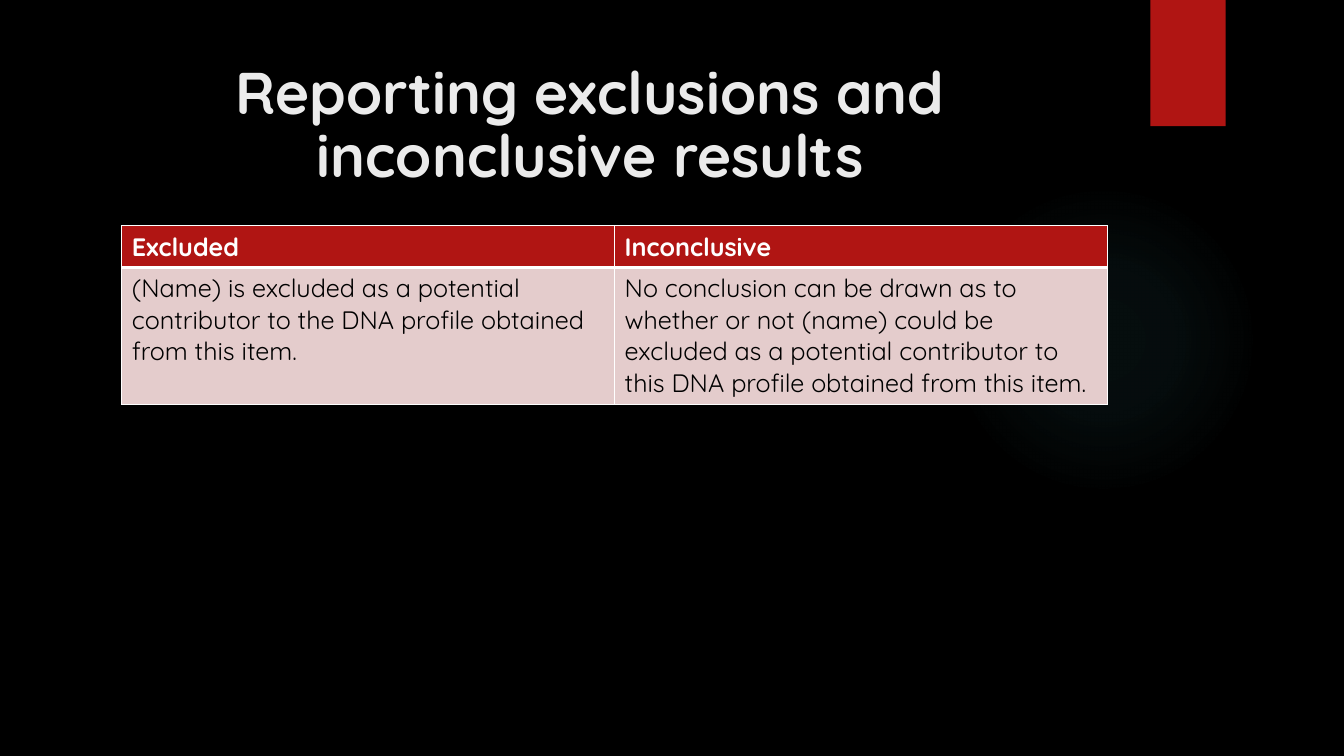
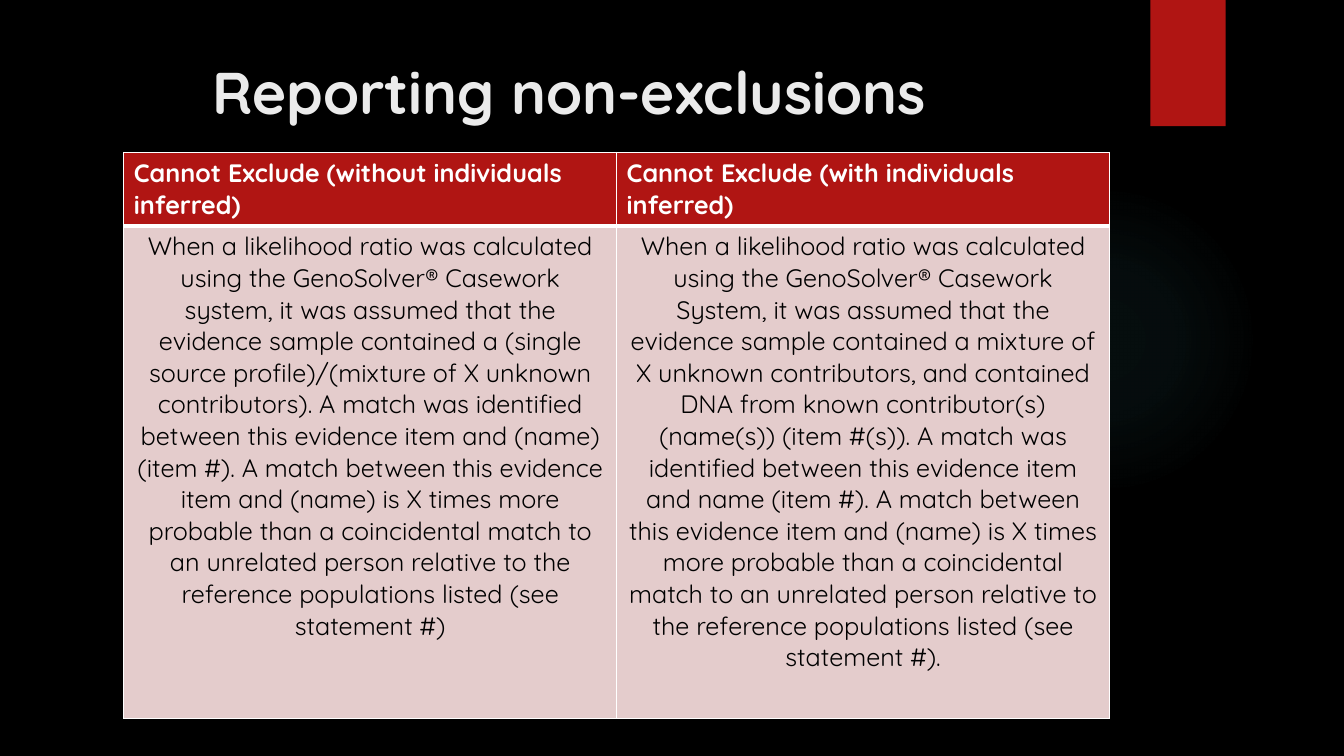
from lxml.etree import SubElement
from pptx import Presentation
from pptx.dml.color import RGBColor
from pptx.enum.shapes import MSO_SHAPE
from pptx.enum.text import MSO_ANCHOR, MSO_AUTO_SIZE, PP_ALIGN
from pptx.oxml.ns import qn
from pptx.util import Cm, Pt

FONT = "Quicksand"
COLORS = {
    "background": "000000",
    "glow": "50B9C1",
    "accent": "B01513",
    "title": "EBEBEB",
    "header_text": "FFFFFF",
    "body_fill": "E4CCCC",
    "body_text": "000000",
    "border": "FFFFFF",
}
GLOW_STOPS = [(0, 7), (36, 6), (69, 0)]
COLUMN_WIDTH = 12.42

SLIDES = [
    {
        "title": "Reporting exclusions and inconclusive results",
        "title_size": (26.14, 3.89),
        "table_at": (3.07, 5.69),
        "row_heights": (1.04, 3.45),
        "body_align": PP_ALIGN.LEFT,
        "rows": [
            ("Excluded", "Inconclusive"),
            (
                "(Name) is excluded as a potential contributor to the DNA profile "
                "obtained from this item.",
                "No conclusion can be drawn as to whether or not (name) could be "
                "excluded as a potential contributor to this DNA profile obtained "
                "from this item.",
            ),
        ],
    },
    {
        "title": "Reporting non-exclusions",
        "title_size": (25.08, 2.95),
        "table_at": (3.12, 3.84),
        "row_heights": (1.83, 12.42),
        "body_align": PP_ALIGN.CENTER,
        "rows": [
            (
                "Cannot Exclude (without individuals inferred)",
                "Cannot Exclude (with individuals inferred)",
            ),
            (
                "When a likelihood ratio was calculated using the GenoSolver® "
                "Casework system, it was assumed that the evidence sample contained "
                "a (single source profile)/(mixture of X unknown contributors). "
                "A match was identified between this evidence item and (name) "
                "(item #). A match between this evidence item and (name) is X times "
                "more probable than a coincidental match to an unrelated person "
                "relative to the reference populations listed (see statement #)",
                "When a likelihood ratio was calculated using the GenoSolver® "
                "Casework System, it was assumed that the evidence sample contained "
                "a mixture of X unknown contributors, and contained DNA from known "
                "contributor(s) (name(s)) (item #(s)). A match was identified "
                "between this evidence item and name (item #). A match between this "
                "evidence item and (name) is X times more probable than a "
                "coincidental match to an unrelated person relative to the reference "
                "populations listed (see statement #).",
            ),
        ],
    },
]


def rgb(name):
    return RGBColor.from_string(COLORS[name])


def style(para, size, color, bold, align):
    para.alignment = align
    para.font.name = FONT
    para.font.size = Pt(size)
    para.font.bold = bold
    para.font.color.rgb = rgb(color)


def add_plain_shape(page, kind, left, top, width, height):
    shape = page.shapes.add_shape(kind, Cm(left), Cm(top), Cm(width), Cm(height))
    shape.shadow.inherit = False
    shape.line.fill.background()
    return shape


def fill_with_glow(shape):
    properties = shape.element.spPr
    gradient = SubElement(properties, qn("a:gradFill"), rotWithShape="1")
    stops = SubElement(gradient, qn("a:gsLst"))
    for position, opacity in GLOW_STOPS:
        stop = SubElement(stops, qn("a:gs"), pos=str(position * 1000))
        color = SubElement(stop, qn("a:srgbClr"), val=COLORS["glow"])
        SubElement(color, qn("a:alpha"), val=str(opacity * 1000))
    circle = SubElement(gradient, qn("a:path"), path="circle")
    SubElement(circle, qn("a:fillToRect"), l="50000", t="50000", r="50000", b="50000")
    properties.find(qn("a:prstGeom")).addnext(gradient)


def add_backdrop(page):
    page.background.fill.solid()
    page.background.fill.fore_color.rgb = rgb("background")
    fill_with_glow(add_plain_shape(page, MSO_SHAPE.OVAL, 23.9, 4.65, 7.82, 7.82))
    band = add_plain_shape(page, MSO_SHAPE.RECTANGLE, 28.99, 0, 1.9, 3.18)
    band.fill.solid()
    band.fill.fore_color.rgb = rgb("accent")


def add_title(page, text, size):
    width, height = size
    box = page.shapes.add_textbox(Cm(1.8), Cm(1.27), Cm(width), Cm(height))
    frame = box.text_frame
    frame.word_wrap = True
    frame.auto_size = MSO_AUTO_SIZE.TEXT_TO_FIT_SHAPE
    frame.vertical_anchor = MSO_ANCHOR.TOP
    frame.text = text
    style(frame.paragraphs[0], 42, "title", True, PP_ALIGN.CENTER)


def set_borders(cell, widths):
    properties = cell._tc.get_or_add_tcPr()
    for side, width in zip(("L", "R", "T", "B"), widths):
        line = SubElement(properties, qn(f"a:ln{side}"), w=str(Pt(width)))
        fill = SubElement(line, qn("a:solidFill"))
        SubElement(fill, qn("a:srgbClr"), val=COLORS["border"])


def add_statement_table(page, content):
    rows, heights = content["rows"], content["row_heights"]
    left, top = content["table_at"]
    columns = len(rows[0])
    table = page.shapes.add_table(
        len(rows), columns, Cm(left), Cm(top),
        Cm(COLUMN_WIDTH * columns), Cm(sum(heights)),
    ).table
    for column in table.columns:
        column.width = Cm(COLUMN_WIDTH)
    for row_index, texts in enumerate(rows):
        is_header = row_index == 0
        table.rows[row_index].height = Cm(heights[row_index])
        for column_index, text in enumerate(texts):
            cell = table.cell(row_index, column_index)
            set_borders(cell, (1, 1, 1, 3) if is_header else (1, 1, 3, 1))
            cell.fill.solid()
            cell.fill.fore_color.rgb = rgb("accent" if is_header else "body_fill")
            cell.text = text
            style(
                cell.text_frame.paragraphs[0], 18,
                "header_text" if is_header else "body_text", is_header,
                PP_ALIGN.LEFT if is_header else content["body_align"],
            )


def main():
    deck = Presentation()
    deck.slide_width, deck.slide_height = Cm(33.87), Cm(19.05)
    for content in SLIDES:
        page = deck.slides.add_slide(deck.slide_layouts[6])
        add_backdrop(page)
        add_title(page, content["title"], content["title_size"])
        add_statement_table(page, content)
    deck.save("out.pptx")


if __name__ == "__main__":
    main()
